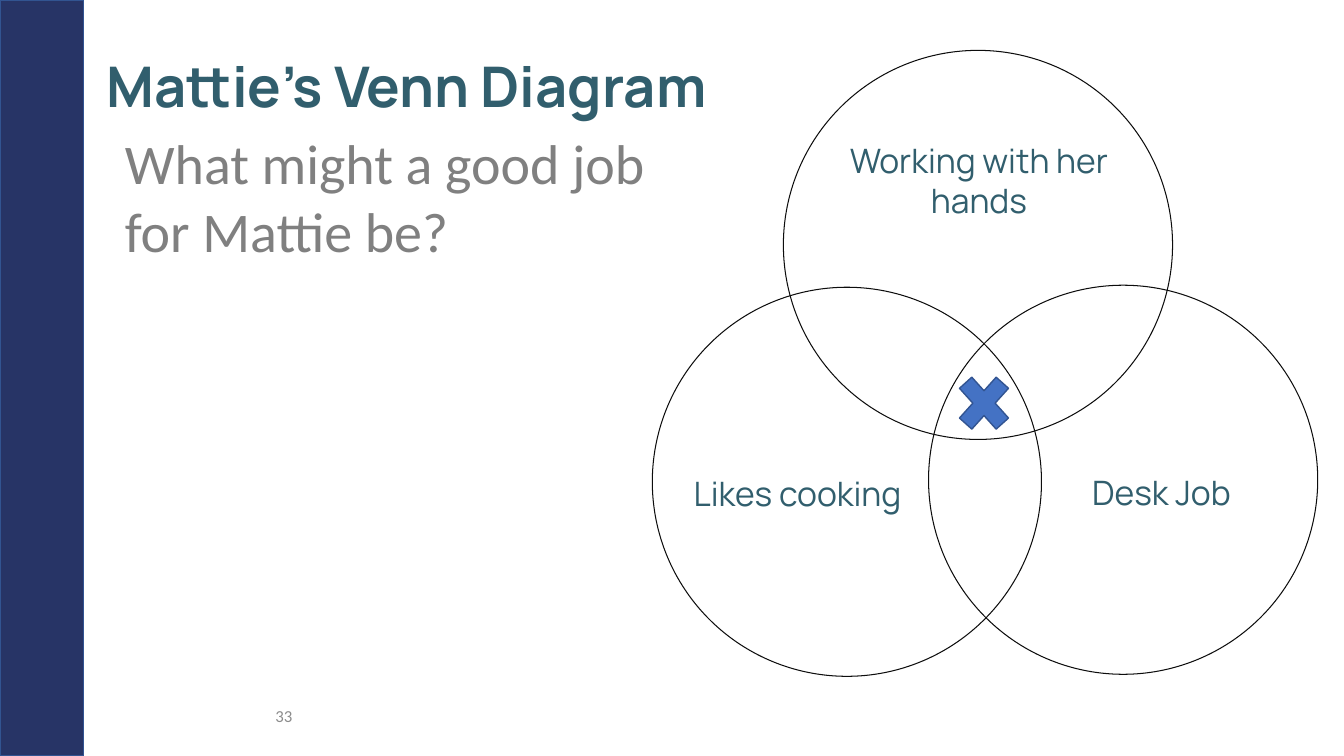
from pptx import Presentation, util as u
from pptx.dml.color import RGBColor
from pptx.enum import shapes, text

theme = dict(
    navy="273466", edge="325491", teal="315E6D", ink="0D0D0D",
    blue="4472C4", gray="808080", pale="8C8C8C",
    head="Manrope", body="Calibri", big=40, label=24, small=12)
wide, high = 13.33, 7.5
kind, side = shapes.MSO_SHAPE, text.PP_ALIGN

deck = Presentation()
deck.slide_width, deck.slide_height = u.Inches(wide), u.Inches(high)
slide = deck.slides.add_slide(deck.slide_layouts[5])


def draw(form, box, fill, line, width):
    item = slide.shapes.add_shape(form, *map(u.Inches, box))
    item.shadow.inherit = False
    if fill:
        item.fill.solid()
        item.fill.fore_color.rgb = RGBColor.from_string(theme[fill])
    else:
        item.fill.background()
    item.line.color.rgb = RGBColor.from_string(theme[line])
    item.line.width = u.Pt(width)


def write(words, box, face, size, color, align, anchor, bold=False, item=None):
    item = item or slide.shapes.add_textbox(0, 0, 0, 0)
    item.left, item.top, item.width, item.height = map(u.Inches, box)
    frame = item.text_frame
    frame.word_wrap = True
    frame.auto_size = text.MSO_AUTO_SIZE.NONE
    frame.vertical_anchor = anchor
    para = frame.paragraphs[0]
    para.alignment = align
    run = para.add_run()
    run.text = words
    font = run.font
    font.name, font.size, font.bold = theme[face], u.Pt(theme[size]), bold
    font.color.rgb = RGBColor.from_string(theme[color])
    return para


top, mid = text.MSO_ANCHOR.TOP, text.MSO_ANCHOR.MIDDLE

# Side band
draw(kind.RECTANGLE, (0, 0, 0.83, high), "navy", "edge", 1)

# Title, question and page number
title = write("Mattie’s Venn Diagram", (0.96, 0.16, 10.89, 1.45),
              "head", "big", "teal", side.LEFT, mid, True, slide.shapes.title)
title.line_spacing = 0.9
write("33", (0, 6.9, 3, 0.4), "body", "small", "pale", side.RIGHT, mid)

# Circles: left, top, then the label's left, top and height
disc = 3.86
for words, x, y, left, head, tall in (
        ("Working with her hands", 7.77, 0.5, 8.21, 1.33, 0.91),
        ("Desk Job", 9.21, 2.83, 10.02, 4.63, 0.5),
        ("Likes cooking", 6.47, 2.85, 6.41, 4.64, 0.5)):
    draw(kind.OVAL, (x, y, disc, disc), None, "ink", 0.75)
    write(words, (left, head, 3, tall), "head", "label", "teal",
          side.CENTER, mid)

# Mark where all three meet
draw(kind.MATH_MULTIPLY, (9.41, 3.61, 0.7, 0.78), "blue", "edge", 1)

write("What might a good job for Mattie be?", (1.14, 1.23, 5.75, 1.45),
      "body", "big", "gray", side.LEFT, top)

deck.save("out.pptx")
